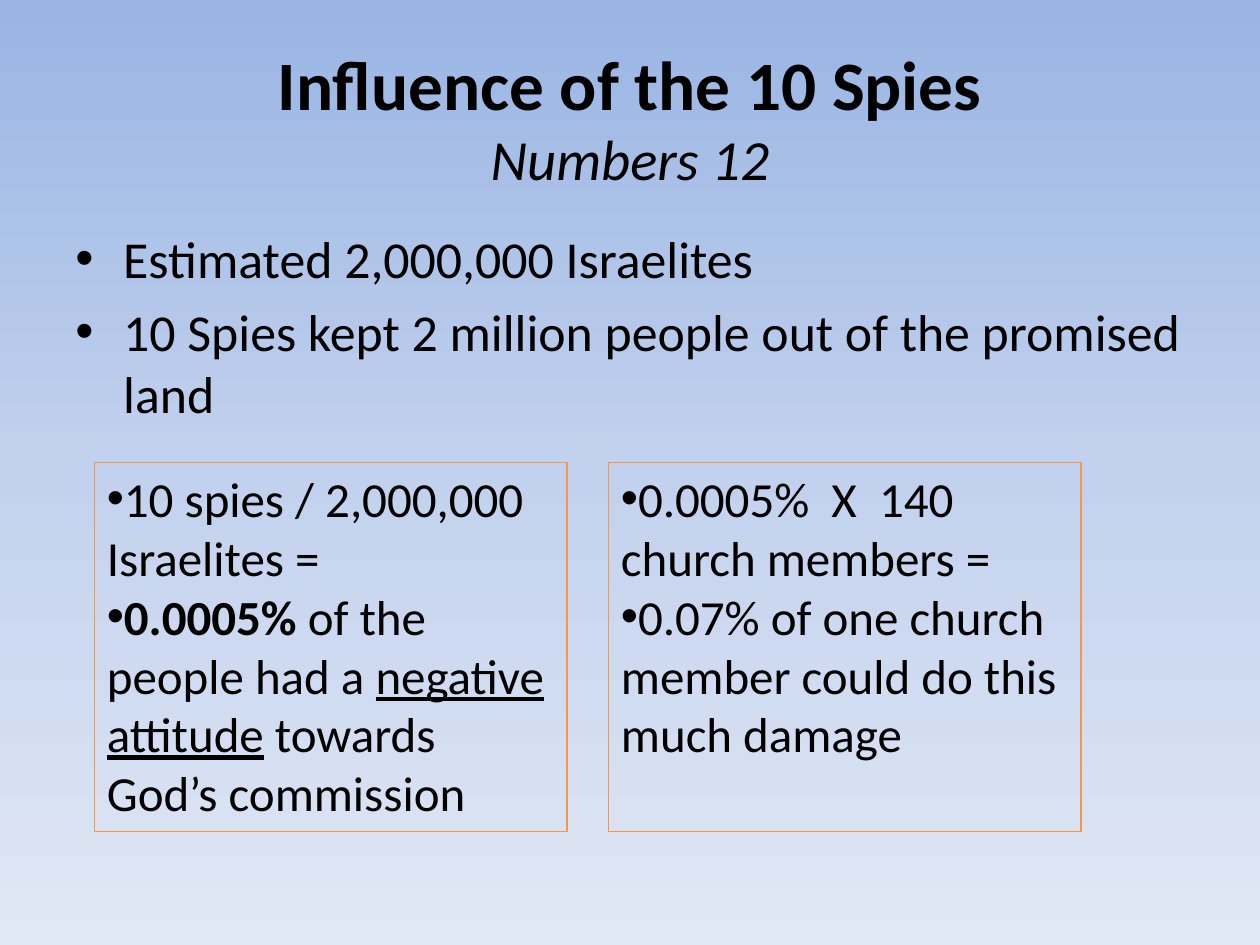
from copy import deepcopy

from lxml import etree
from pptx import Presentation
from pptx.dml.color import RGBColor
from pptx.enum.shapes import MSO_SHAPE as SHAPE
from pptx.enum.text import MSO_ANCHOR as ANCHOR, PP_ALIGN as ALIGN
from pptx.oxml.ns import qn
from pptx.util import Inches, Pt

COLORS = {
    "text": "000000",
    "border": "F79646",
    "sky_top": "9AB5E4",
    "sky_middle": "C2D1ED",
    "sky_bottom": "E1E8F5",
}
FONT = "Calibri"


def color(name):
    return RGBColor.from_string(COLORS[name])


def add_run(p, text, size, bold=False, italic=False, underline=False):
    r = p.add_run()
    r.text = text
    f = r.font
    f.name, f.size = FONT, Pt(size)
    f.bold, f.italic, f.underline = bold, italic, underline
    f.color.rgb = color("text")


def add_bullets(tf, items, size, indent=0, gap=0):
    for i, runs in enumerate(items):
        p = tf.add_paragraph() if i else tf.paragraphs[0]
        p.alignment = ALIGN.LEFT
        p.space_before = Pt(gap if i else 0)
        pPr = p._p.get_or_add_pPr()
        pPr.set("marL", str(Inches(indent)))
        pPr.set("indent", str(-Inches(indent)))
        etree.SubElement(pPr, qn("a:buFont")).set("typeface", "Arial")
        etree.SubElement(pPr, qn("a:buChar")).set("char", "•")
        for text, style in runs:
            add_run(p, text, size, **style)


def add_text_box(s, left, top, width, height):
    box = s.shapes.add_textbox(Inches(left), Inches(top), Inches(width), Inches(height))
    tf = box.text_frame
    tf.word_wrap = True
    return tf


def paint_background(s):
    fill = s.background.fill
    fill.gradient()
    fill.gradient_angle = 270
    stops = s.element.find(".//" + qn("a:gsLst"))
    stops.insert(1, deepcopy(stops[0]))
    names = ("sky_top", "sky_middle", "sky_bottom")
    for stop, name, position in zip(fill.gradient_stops, names, (0, 0.5, 1)):
        stop.color.rgb = color(name)
        stop.position = position


def add_title(s, left, top, width, height, title, reference):
    tf = add_text_box(s, left, top, width, height)
    tf.vertical_anchor = ANCHOR.MIDDLE
    p = tf.paragraphs[0]
    p.alignment = ALIGN.CENTER
    add_run(p, title, 39.6, bold=True)
    p.add_line_break()
    add_run(p, reference, 32.4, italic=True)


def add_body(s, left, top, width, height, items):
    tf = add_text_box(s, left, top, width, height)
    add_bullets(tf, items, 29.6, indent=0.38, gap=6)


def add_panel(s, left, top, width, height, items):
    sp = s.shapes.add_shape(
        SHAPE.RECTANGLE, Inches(left), Inches(top), Inches(width), Inches(height)
    )
    sp.shadow.inherit = False
    sp.fill.background()
    sp.line.color.rgb = color("border")
    sp.line.width = Pt(0.75)
    tf = sp.text_frame
    tf.word_wrap = True
    tf.vertical_anchor = ANCHOR.TOP
    add_bullets(tf, items, 28)


def main():
    prs = Presentation()
    prs.slide_width, prs.slide_height = Inches(10), Inches(7.5)
    s = prs.slides.add_slide(prs.slide_layouts[6])
    paint_background(s)
    add_title(s, 0.5, 0.3, 9, 1.25, "Influence of the 10 Spies", "Numbers 12")
    add_body(s, 0.5, 1.75, 9, 1.58, [
        [("Estimated 2,000,000 Israelites", {})],
        [("10 Spies kept 2 million people out of the promised land", {})],
    ])
    panels = [
        [
            [("10 spies / 2,000,000 Israelites =", {})],
            [
                ("0.0005% ", {"bold": True}),
                ("of the people had a ", {}),
                ("negative attitude", {"underline": True}),
                (" towards God’s commission", {}),
            ],
        ],
        [
            [("0.0005%  X  140 church members =", {})],
            [("0.07% of one church member could do this much damage", {})],
        ],
    ]
    width, gap = 3.75, 0.33
    for i, items in enumerate(panels):
        add_panel(s, 0.75 + i * (width + gap), 3.67, width, 2.93, items)
    prs.save("out.pptx")


if __name__ == "__main__":
    main()
